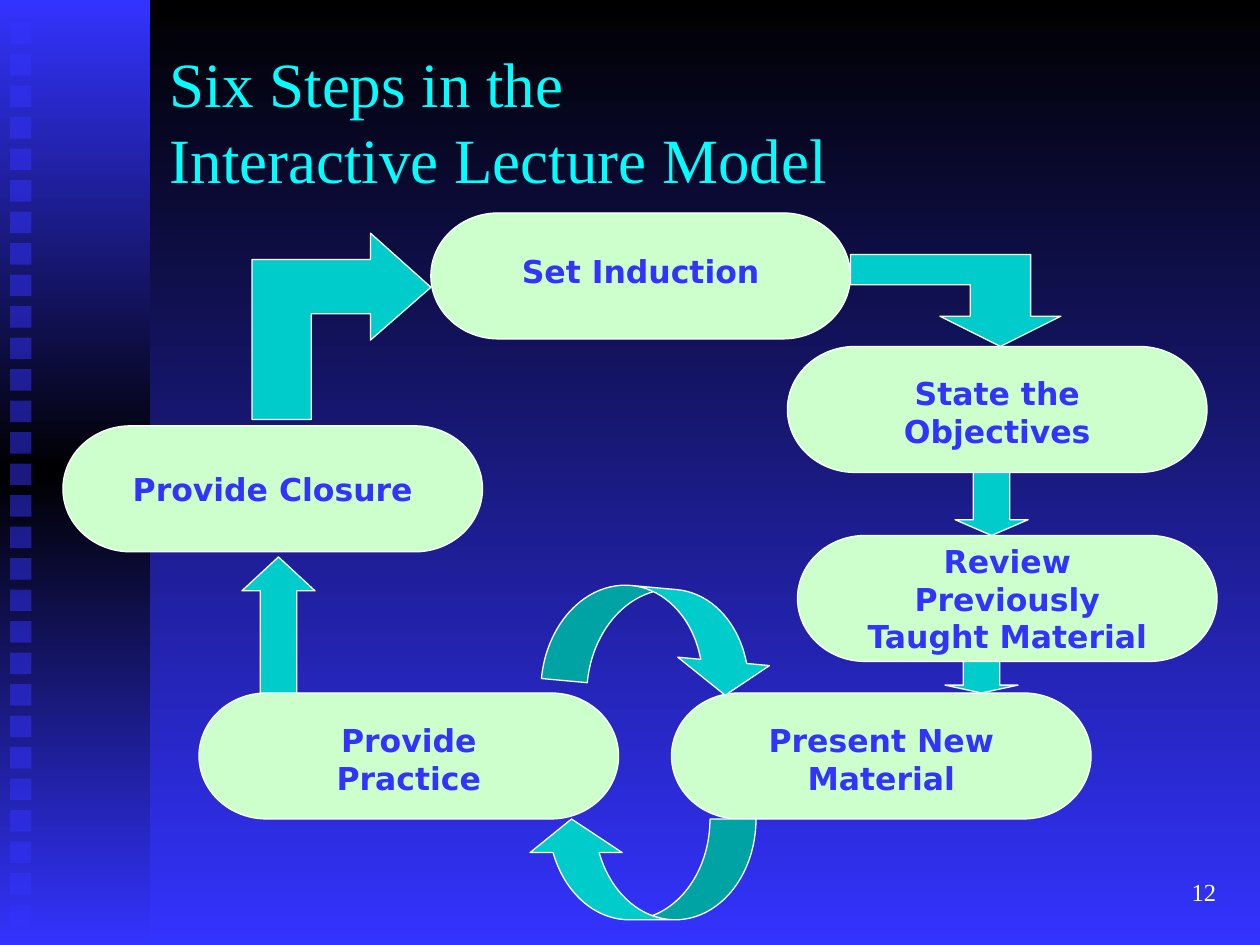
from lxml.etree import SubElement
from pptx import Presentation
from pptx.dml.color import RGBColor
from pptx.enum.shapes import MSO_SHAPE
from pptx.enum.text import MSO_ANCHOR, PP_ALIGN
from pptx.oxml.ns import qn
from pptx.util import Inches, Pt

COLORS = {
    "night": "000000",
    "blue": "3333FF",
    "title": "00FFFF",
    "white": "FFFFFF",
    "step": "CCFFCC",
    "arrow": "00CCCC",
}
STEP_SIZE = (3.33, 1)
LABEL_WIDTH = 2.5
SQUARE = 0.17
SQUARE_PITCH = 0.25

STEPS = [
    ("Set Induction", 3.42, 1.69, 1.5, 0.85),
    ("State the Objectives", 6.25, 2.75, 2.92, 0.7),
    ("Review Previously Taught Material", 6.33, 4.25, 4.25, 1),
    ("Present New Material", 5.33, 5.5, 5.67, 0.7),
    ("Provide Practice", 1.58, 5.5, 5.67, 0.7),
    ("Provide Closure", 0.5, 3.38, 3.68, 0.4),
]
CURVE = (0.457, 0.914, 0.333)
ARROWS = [
    (MSO_SHAPE.DOWN_ARROW, (7.58, 3.75, 0.58, 0.5), (0.5, 0.25), 0),
    (MSO_SHAPE.DOWN_ARROW, (7.5, 5.25, 0.58, 0.25), (0.5, 0.25), 0),
    (MSO_SHAPE.UP_ARROW, (1.92, 4.42, 0.58, 1.08), (0.5, 0.464), 0),
    (MSO_SHAPE.CURVED_DOWN_ARROW, (4.17, 6.5, 1.83, 0.8), CURVE, 180),
    (MSO_SHAPE.CURVED_DOWN_ARROW, (4.33, 4.67, 1.83, 0.8), CURVE, 5.2),
]
BENT_ARROWS = [
    [(7.94, 2.75), (7.46, 2.51), (7.7, 2.51), (7.7, 2.26), (6.75, 2.26),
     (6.75, 2.02), (8.18, 2.02), (8.18, 2.51), (8.42, 2.51)],
    [(3.42, 2.28), (2.94, 2.7), (2.94, 2.49), (2.47, 2.49), (2.47, 3.33),
     (2, 3.33), (2, 2.06), (2.94, 2.06), (2.94, 1.85)],
]


class LectureSlide:
    """Draws the elements of the lecture cycle in one shared style."""

    def __init__(self, slide):
        self.slide = slide
        self.shapes = slide.shapes

    def color(self, name):
        return RGBColor.from_string(COLORS[name])

    def gradient(self, owner, fill, names):
        fill.gradient()
        fill.gradient_angle = 270
        stops = owner.element.find(".//" + qn("a:gsLst"))
        stops.clear()
        for index, name in enumerate(names):
            position = str(index * 100000 // (len(names) - 1))
            stop = SubElement(stops, qn("a:gs"), pos=position)
            SubElement(stop, qn("a:srgbClr"), val=COLORS[name])

    def background(self):
        self.gradient(self.slide, self.slide.background.fill, ["night", "blue"])

    def block(self, kind, box):
        block = self.shapes.add_shape(kind, *map(Inches, box))
        block.shadow.inherit = False
        block.line.fill.background()
        return block

    def sidebar(self):
        band = self.block(MSO_SHAPE.RECTANGLE, (0, 0, 1.19, 7.5))
        self.gradient(band, band.fill, ["blue", "night", "blue"])

    def square(self, top):
        square = self.block(MSO_SHAPE.RECTANGLE, (0.08, top, SQUARE, SQUARE))
        self.paint(square, "blue")
        tint = square.element.spPr.find(".//" + qn("a:srgbClr"))
        SubElement(tint, qn("a:alpha"), val="50000")

    def paint(self, shape, name):
        shape.fill.solid()
        shape.fill.fore_color.rgb = self.color(name)

    def outline(self, shape):
        shape.line.color.rgb = self.color("white")
        shape.line.width = Pt(0.75)

    def text(self, words, box, size, color, font="Times New Roman", bold=False,
             align=PP_ALIGN.LEFT, anchor=MSO_ANCHOR.MIDDLE):
        frame = self.shapes.add_textbox(*map(Inches, box)).text_frame
        frame.word_wrap = True
        frame.vertical_anchor = anchor
        frame.text = words
        paragraph = frame.paragraphs[0]
        paragraph.alignment = align
        for run in paragraph.runs:
            run.font.name = font
            run.font.size = Pt(size)
            run.font.bold = bold
            run.font.color.rgb = self.color(color)

    def step(self, words, left, top, label_top, label_height):
        step = self.block(MSO_SHAPE.FLOWCHART_TERMINATOR, (left, top, *STEP_SIZE))
        self.paint(step, "step")
        self.outline(step)
        label_left = left + (STEP_SIZE[0] - LABEL_WIDTH) / 2
        self.text(words, (label_left, label_top, LABEL_WIDTH, label_height), 18, "blue",
                  "DejaVu Sans", True, PP_ALIGN.CENTER, MSO_ANCHOR.BOTTOM)

    def arrow(self, kind, box, adjustments, rotation):
        arrow = self.block(kind, box)
        for index, value in enumerate(adjustments):
            arrow.adjustments[index] = value
        arrow.rotation = rotation
        self.paint(arrow, "arrow")
        self.outline(arrow)

    def bent_arrow(self, points):
        start, *corners = [(Inches(x), Inches(y)) for x, y in points]
        builder = self.shapes.build_freeform(*start)
        builder.add_line_segments(corners, close=True)
        arrow = builder.convert_to_shape()
        arrow.shadow.inherit = False
        self.paint(arrow, "arrow")
        self.outline(arrow)


def main():
    deck = Presentation()
    deck.slide_width, deck.slide_height = Inches(10), Inches(7.5)
    lecture = LectureSlide(deck.slides.add_slide(deck.slide_layouts[6]))
    lecture.background()
    lecture.sidebar()
    for row in range(29):
        lecture.square(0.18 + row * SQUARE_PITCH)
    lecture.text("Six Steps in the\vInteractive Lecture Model",
                 (1.25, 0.33, 8.5, 1.25), 36, "title")
    lecture.text("12", (7.67, 6.83, 2.08, 0.5), 14, "white", align=PP_ALIGN.RIGHT)
    for step in STEPS:
        lecture.step(*step)
    for arrow in ARROWS:
        lecture.arrow(*arrow)
    for points in BENT_ARROWS:
        lecture.bent_arrow(points)
    deck.save("out.pptx")


if __name__ == "__main__":
    main()
